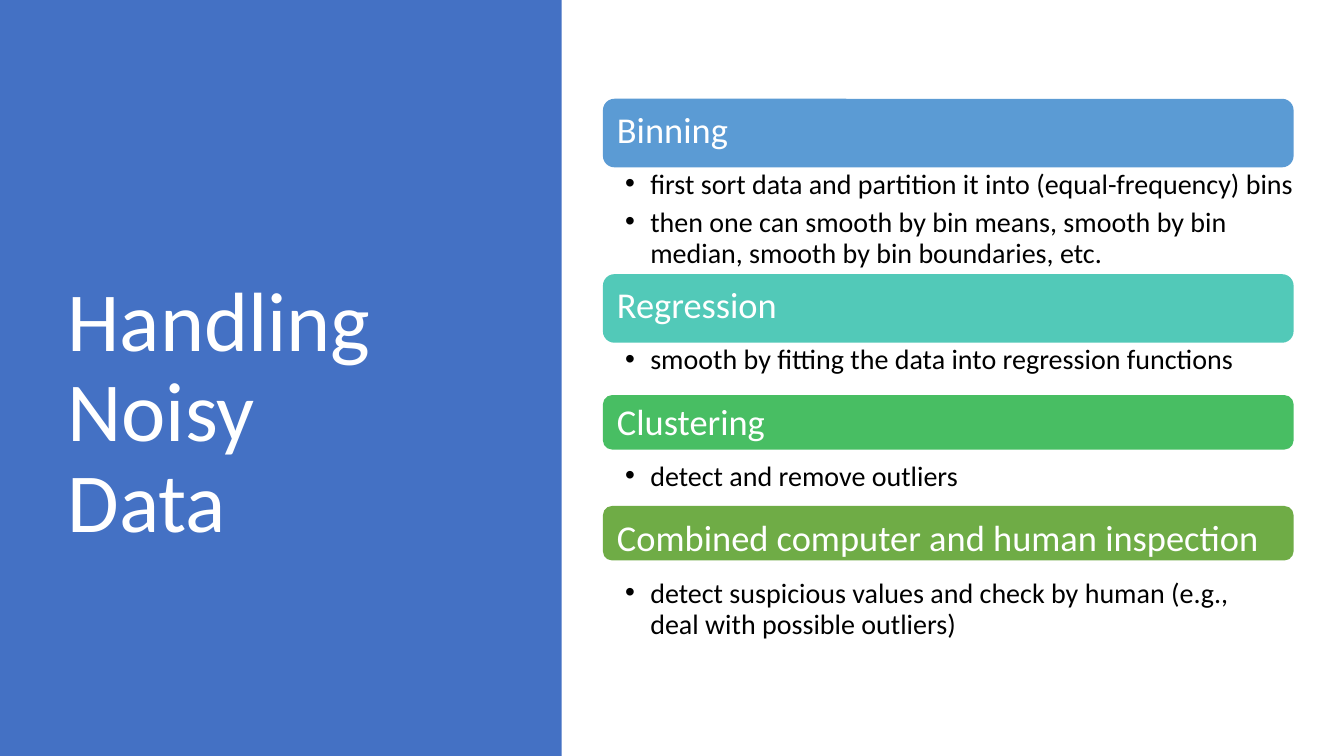
from dataclasses import dataclass

from lxml import etree
from pptx import Presentation
from pptx.dml.color import RGBColor
from pptx.enum.shapes import MSO_SHAPE
from pptx.enum.text import MSO_ANCHOR, PP_ALIGN
from pptx.oxml.ns import qn
from pptx.util import Inches, Pt

RECTANGLE = MSO_SHAPE.RECTANGLE
ROUNDED = MSO_SHAPE.ROUNDED_RECTANGLE
TOP = MSO_ANCHOR.TOP
LEFT = PP_ALIGN.LEFT


@dataclass(frozen=True)
class Theme:
    font: str = "Calibri"
    white: str = "FFFFFF"
    black: str = "000000"
    panel: str = "4471C4"
    title_size: int = 60
    heading_size: int = 26
    bullet_size: int = 20


@dataclass(frozen=True)
class Bar:
    top: float
    height: float
    color: str


@dataclass(frozen=True)
class Line:
    text: str
    size: int
    color: str
    before: float
    spacing: float | None = None
    bullet: bool = False


@dataclass(frozen=True)
class TextBlock:
    left: float
    top: float
    width: float
    height: float
    inset: float
    lines: tuple[Line, ...]


THEME = Theme()


def heading(text: str, before: float) -> Line:
    """Return a white section heading."""
    return Line(text, THEME.heading_size, THEME.white, before)


def bullet(text: str, before: float, spacing: float | None = None) -> Line:
    """Return a black bulleted line."""
    return Line(text, THEME.bullet_size, THEME.black, before, spacing, True)


BAR_LEFT, BAR_WIDTH = 5.98, 6.85
BARS = (
    Bar(0.98, 0.68, "5B9BD4"),
    Bar(2.72, 0.68, "52C9B8"),
    Bar(3.92, 0.54, "48BE63"),
    Bar(5.02, 0.54, "6FAC46"),
)
TITLE = Line("Handling\vNoisy\vData", THEME.title_size, THEME.white, 9.2, 64.8)
BLOCKS = (
    TextBlock(0.66, 2.62, 3.53, 1.93, 0.13, (TITLE,)),
    TextBlock(6.11, 1.05, 1.13, 0.46, 0.01, (heading("Binning", 1.1),)),
    TextBlock(6.11, 1.6, 6.97, 4.99, 0.05, (
        bullet("first sort data and partition it into (equal-frequency) bins", 3.9),
        bullet("then one can smooth by bin means, smooth by bin\v"
               "median, smooth by bin boundaries, etc.", 5.3, 22),
        heading("Regression", 9.8),
        bullet("smooth by fitting the data into regression functions", 11.2),
        heading("Clustering", 16.6),
        bullet("detect and remove outliers", 11.2),
        heading("Combined computer and human inspection", 16.6),
        bullet("detect suspicious values and check by human (e.g.,\v"
               "deal with possible outliers)", 13.6, 22.1),
    )),
)


def apply_format(target: object, values: dict[str, object]) -> None:
    """Set each named attribute on the target."""
    for name, value in values.items():
        setattr(target, name, value)


def add_block(page, kind: MSO_SHAPE, left: float, bar: Bar, width: float) -> None:
    """Draw a filled shape without outline or shadow."""
    shape = page.shapes.add_shape(
        kind, Inches(left), Inches(bar.top), Inches(width), Inches(bar.height))
    shape.shadow.inherit = False
    shape.fill.solid()
    shape.fill.fore_color.rgb = RGBColor.from_string(bar.color)
    shape.line.fill.background()


def write_line(para, line: Line) -> None:
    """Write one paragraph with its spacing, indent and bullet."""
    para.text = line.text
    apply_format(para, {
        "alignment": LEFT,
        "space_before": Pt(line.before),
        "line_spacing": Pt(line.spacing) if line.spacing else None,
    })
    for span in para.runs:
        apply_format(span.font, {"name": THEME.font, "size": Pt(line.size)})
        span.font.color.rgb = RGBColor.from_string(line.color)
    properties = para._p.get_or_add_pPr()
    properties.set("marL", str(Inches(0.34 if line.bullet else 0.01)))
    properties.set("indent", str(Inches(-0.25 if line.bullet else 0)))
    if line.bullet:
        etree.SubElement(properties, qn("a:buFont")).set("typeface", "Arial")
        etree.SubElement(properties, qn("a:buChar")).set("char", "•")


def add_text(page, block: TextBlock) -> None:
    """Add a text box holding the lines of a block."""
    box = page.shapes.add_textbox(
        Inches(block.left), Inches(block.top), Inches(block.width), Inches(block.height))
    frame = box.text_frame
    apply_format(frame, {
        "word_wrap": True,
        "vertical_anchor": TOP,
        "margin_left": 0,
        "margin_right": 0,
        "margin_bottom": 0,
        "margin_top": Inches(block.inset),
    })
    for index, line in enumerate(block.lines):
        write_line(frame.add_paragraph() if index else frame.paragraphs[0], line)


def main() -> None:
    """Build and save the slide."""
    deck = Presentation()
    apply_format(deck, {"slide_width": Inches(13.33), "slide_height": Inches(7.5)})
    page = deck.slides.add_slide(deck.slide_layouts[6])
    add_block(page, RECTANGLE, 0, Bar(0, 7.5, THEME.panel), 5.57)
    for bar in BARS:
        add_block(page, ROUNDED, BAR_LEFT, bar, BAR_WIDTH)
    for block in BLOCKS:
        add_text(page, block)
    deck.save("out.pptx")


if __name__ == "__main__":
    main()
